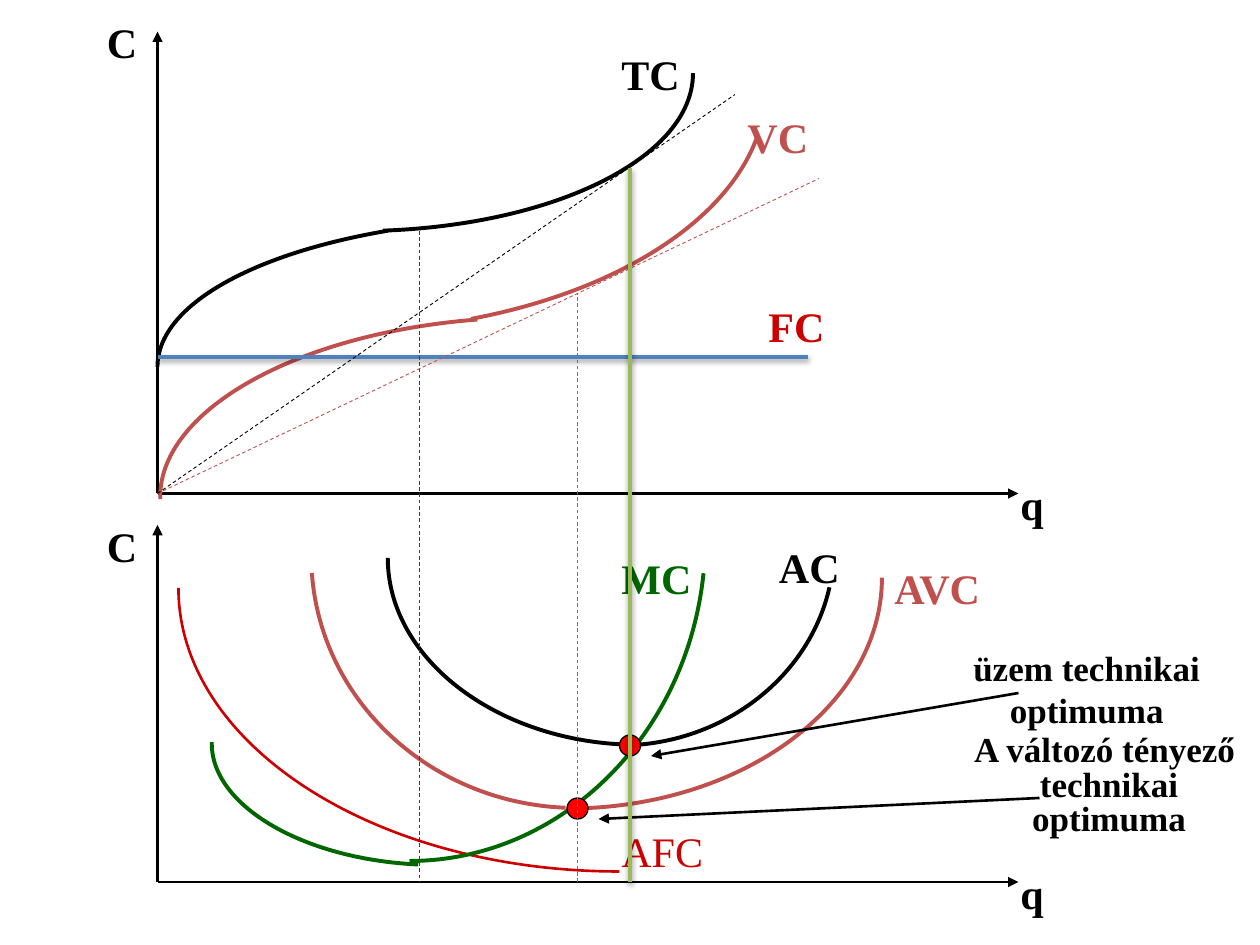
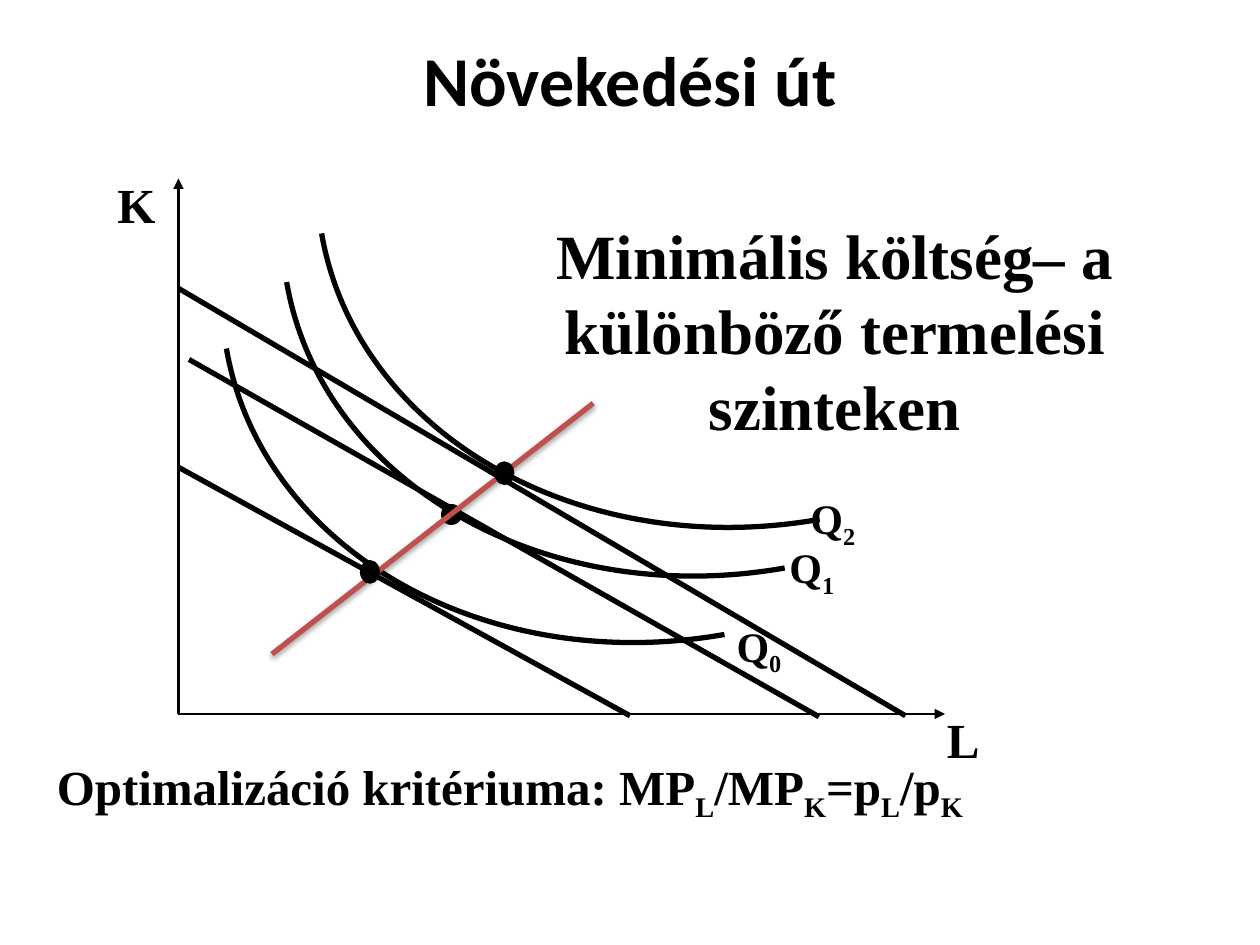
"""Build two slides on cost curves and the expansion path."""

from dataclasses import dataclass

from lxml.etree import SubElement
from pptx import Presentation
from pptx.dml.color import RGBColor
from pptx.enum.dml import MSO_LINE
from pptx.enum.shapes import MSO_CONNECTOR, MSO_SHAPE
from pptx.enum.text import MSO_ANCHOR, MSO_AUTO_SIZE, PP_ALIGN
from pptx.oxml.ns import qn
from pptx.util import Pt


@dataclass(frozen=True)
class Theme:
    black: str = "000000"
    brick: str = "C0504D"
    crimson: str = "CC0000"
    green: str = "006600"
    blue: str = "4F81BD"
    olive: str = "9BBB59"
    red: str = "FF0000"
    body_font: str = "Times New Roman"
    title_font: str = "Calibri"
    title: int = 40
    heading: int = 36
    formula: int = 28
    label: int = 24
    note: int = 20
    axis: float = 1.5
    guide: float = 0.5
    emphasis: float = 2
    curve: float = 2.25
    heavy: float = 3


THEME = Theme()

COST_AXES = [
    ((90, 282), (90, 18)),
    ((90, 282), (582, 282)),
    ((90, 504), (90, 300)),
    ((90, 504), (582, 504)),
]
COST_CURVES = [
    (THEME.brick, THEME.curve, [(272.8, 182.6), (168.2, 190.8), (90.2, 235.4), (91.6, 285.2)]),
    (THEME.brick, THEME.curve, [(269.2, 182.2), (352.8, 166.4), (415.4, 126.6), (432.8, 77.8)]),
    (THEME.black, THEME.curve, [(221.8, 131.8), (141.8, 145.4), (90, 175.6), (90, 209.6)]),
    (THEME.black, THEME.curve, [(218.8, 131.8), (319, 128.2), (396, 89.2), (396, 41.8)]),
    (THEME.crimson, THEME.axis, [(354, 498), (214.6, 498), (102, 425.6), (102, 336)]),
    (THEME.brick, THEME.curve, [(323.2, 461.6), (246.2, 458.6), (183.4, 401), (178.2, 327.4)]),
    (THEME.black, THEME.curve, [(366.4, 425.6), (287.2, 426.2), (221.6, 378), (221.6, 318.8)]),
    (THEME.black, THEME.curve, [(354, 426), (411.8, 426), (462.2, 388), (474, 335.6)]),
    (THEME.brick, THEME.curve, [(324, 462), (423.4, 462), (504, 403.2), (504, 330)]),
    (THEME.green, THEME.curve, [(239, 494), (172.8, 491), (120.2, 460), (121, 424)]),
    (THEME.green, THEME.curve, [(234, 492), (319.6, 492), (392.4, 421.2), (402, 327.6)]),
]
COST_LABELS = [
    ("C", 54, 6, 42, THEME.black),
    ("q", 576, 270, 36, THEME.black),
    ("C", 54, 294, 36, THEME.black),
    ("q", 576, 492, 36, THEME.black),
    ("FC", 432, 168, 60, THEME.crimson),
    ("VC", 420, 60, 54, THEME.brick),
    ("TC", 348, 24, 54, THEME.black),
    ("AVC", 504, 318, 78, THEME.brick),
    ("MC", 348, 312, 60, THEME.green),
    ("AC", 438, 306, 54, THEME.black),
]
FIXED_COST = ((90, 204), (462, 204))
OPTIMUM_LINE = ((360, 96), (360, 504))
OPTIMUM_POINTS = [(360, 426), (330, 462)]
OPTIMUM_ARROWS = [((582, 396), (372, 432)), ((594, 456), (342, 468))]
OPTIMUM_NOTES = [
    (["üzem technikai optimuma"], (546, 366, 150, 55.2), None),
    (["A változó tényező ", "technikai", "optimuma"], (546, 424.8, 175.5, 60.5), 0.4),
]
GUIDES = [
    (THEME.green, (239.8, 132), (239.8, 504)),
    (THEME.brick, (90, 282), (468, 102)),
    (THEME.brick, (330, 504), (330, 168)),
    (THEME.black, (90, 282), (420, 54)),
]

GROWTH_TITLE = "Növekedési út"
GROWTH_AXES = [((102, 408), (540, 408)), ((102, 408), (102, 102))]
ISOCOSTS = [
    ((102, 267), (360, 409)),
    ((108, 205.4), (468, 409.6)),
    ((102, 164.8), (517.4, 409)),
]
ISOQUANT = [(414, 362.6), (276.6, 386.8), (149.2, 313.4), (129.4, 199.2)]
ISOQUANT_SHIFTS = [(0, 0), (34.4, -38), (54.4, -65.8)]
GROWTH_PATH = ((155.4, 373.8), (339, 230.4))
MIDDLE_POINT = (258, 294)
OUTER_POINTS = [(211.4, 326.8), (288.2, 270.4)]
GROWTH_TEXTS = [
    (["K"], (60, 96, 42, 41), THEME.formula, PP_ALIGN.LEFT),
    (["L"], (534, 402, 54, 41), THEME.formula, PP_ALIGN.LEFT),
    (["Q", "2"], (456, 278, 84, 36), THEME.label, PP_ALIGN.LEFT),
    (["Q", "1"], (444, 306, 42, 36), THEME.label, PP_ALIGN.LEFT),
    (["Q", "0"], (413.8, 351, 42.5, 36), THEME.label, PP_ALIGN.LEFT),
    (["Optimalizáció kritériuma: MP", "L", "/MP", "K", "=p", "L", "/p", "K"],
     (25.4, 428.8, 560, 41), THEME.formula, PP_ALIGN.LEFT),
    (["Minimális költség– a különböző termelési szinteken"],
     (270, 120, 414, 138), THEME.heading, PP_ALIGN.CENTER),
]


def style_font(font, size, color=THEME.black, name=THEME.body_font, bold=True):
    """Apply one type style."""
    font.name, font.size, font.bold = name, Pt(size), bold
    font.color.rgb = RGBColor.from_string(color)


def style_line(line, color, width):
    """Apply a solid outline."""
    line.color.rgb = RGBColor.from_string(color)
    line.width = Pt(width)


def add_line(slide, start, end, color=THEME.black, width=THEME.axis,
             arrow=False, dashed=False, shadow=False):
    """Draw a straight line, optionally with an arrowhead, dashes or a shadow."""
    connector = slide.shapes.add_connector(
        MSO_CONNECTOR.STRAIGHT, *(Pt(value) for value in start + end))
    style_line(connector.line, color, width)
    if dashed:
        connector.line.dash_style = MSO_LINE.DASH
    properties = connector._element.spPr
    if arrow:
        SubElement(properties.find(qn("a:ln")), qn("a:tailEnd"), type="triangle")
    effects = SubElement(properties, qn("a:effectLst"))
    if shadow:
        outer = SubElement(effects, qn("a:outerShdw"), blurRad=str(Pt(3.1)),
                           dist=str(Pt(1.6)), dir="5400000", rotWithShape="0")
        tint = SubElement(outer, qn("a:srgbClr"), val=THEME.black)
        SubElement(tint, qn("a:alpha"), val="38000")


def add_curve(slide, controls, color, width):
    """Draw an open cubic curve from its four control points."""
    points = [(Pt(x), Pt(y)) for x, y in controls]
    builder = slide.shapes.build_freeform(*points[0])
    builder.add_line_segments(points[1:], close=False)
    curve = builder.convert_to_shape()
    outline = next(curve._element.spPr.iter(qn("a:path")))
    segments = outline.findall(qn("a:lnTo"))
    cubic = SubElement(outline, qn("a:cubicBezTo"))
    for segment in segments:
        cubic.append(segment[0])
        outline.remove(segment)
    curve.shadow.inherit = False
    curve.fill.background()
    style_line(curve.line, color, width)


def add_dot(slide, center, size, fill, line_width=0, preset=MSO_SHAPE.OVAL):
    """Draw a filled dot around its centre."""
    (x, y), (width, height) = center, size
    dot = slide.shapes.add_shape(
        preset, Pt(x - width / 2), Pt(y - height / 2), Pt(width), Pt(height))
    dot.shadow.inherit = False
    dot.fill.solid()
    dot.fill.fore_color.rgb = RGBColor.from_string(fill)
    if line_width:
        style_line(dot.line, THEME.black, line_width)
    else:
        dot.line.fill.background()


def add_text_frame(slide, box):
    """Add a wrapping text box and return its frame."""
    frame = slide.shapes.add_textbox(*(Pt(value) for value in box)).text_frame
    frame.word_wrap = True
    frame.auto_size = MSO_AUTO_SIZE.SHAPE_TO_FIT_TEXT
    return frame


def add_text(slide, lines, box, size, color=THEME.black, bold=True,
             align=PP_ALIGN.LEFT, spacing=None):
    """Add a text box with one paragraph per line."""
    frame = add_text_frame(slide, box)
    frame.text = "\n".join(lines)
    for index, paragraph in enumerate(frame.paragraphs):
        paragraph.alignment = align
        if spacing:
            paragraph.line_spacing = spacing
        if index:
            paragraph.space_before = Pt(size / 2)
        for run in paragraph.runs:
            style_font(run.font, size, color, bold=bold)


def add_formula(slide, parts, box, size, align):
    """Add one paragraph in which every second part is a subscript."""
    paragraph = add_text_frame(slide, box).paragraphs[0]
    paragraph.alignment = align
    for index, part in enumerate(parts):
        run = paragraph.add_run()
        run.text = part
        style_font(run.font, size)
        if index % 2:
            run._r.get_or_add_rPr().set("baseline", "-25000")


def build_cost_slide(presentation):
    """Build the slide of total and average cost curves."""
    slide = presentation.slides.add_slide(presentation.slide_layouts[6])
    for start, end in COST_AXES:
        add_line(slide, start, end, arrow=True)
    for color, width, controls in COST_CURVES:
        add_curve(slide, controls, color, width)
    add_line(slide, *FIXED_COST, THEME.blue, THEME.emphasis, shadow=True)
    for text, left, top, width, color in COST_LABELS:
        add_text(slide, [text], (left, top, width, 36), THEME.label, color)
    add_text(slide, ["AFC"], (348, 468, 78, 36), THEME.label, THEME.crimson, bold=False)
    for center in OPTIMUM_POINTS:
        add_dot(slide, center, (12, 12), THEME.red, 0.75)
    for start, end in OPTIMUM_ARROWS:
        add_line(slide, start, end, arrow=True)
    for lines, box, spacing in OPTIMUM_NOTES:
        add_text(slide, lines, box, THEME.note, align=PP_ALIGN.CENTER, spacing=spacing)
    for color, start, end in GUIDES:
        add_line(slide, start, end, color, THEME.guide, dashed=True)
    add_line(slide, *OPTIMUM_LINE, THEME.olive, THEME.emphasis, shadow=True)


def build_growth_slide(presentation):
    """Build the slide of isoquants, isocosts and the expansion path."""
    slide = presentation.slides.add_slide(presentation.slide_layouts[5])
    title = slide.shapes.title
    title.left, title.top, title.width, title.height = Pt(24), Pt(0), Pt(672), Pt(90)
    title.text_frame.text = GROWTH_TITLE
    title.text_frame.vertical_anchor = MSO_ANCHOR.MIDDLE
    paragraph = title.text_frame.paragraphs[0]
    paragraph.alignment = PP_ALIGN.CENTER
    style_font(paragraph.runs[0].font, THEME.title, name=THEME.title_font)
    for start, end in GROWTH_AXES:
        add_line(slide, start, end, arrow=True)
    add_dot(slide, MIDDLE_POINT, (12, 12), THEME.black)
    for start, end in ISOCOSTS:
        add_line(slide, start, end, width=THEME.heavy)
    for shift_x, shift_y in ISOQUANT_SHIFTS:
        controls = [(x + shift_x, y + shift_y) for x, y in ISOQUANT]
        add_curve(slide, controls, THEME.black, THEME.heavy)
    for parts, box, size, align in GROWTH_TEXTS:
        add_formula(slide, parts, box, size, align)
    add_line(slide, *GROWTH_PATH, THEME.brick, THEME.heavy, shadow=True)
    for center in OUTER_POINTS:
        add_dot(slide, center, (9.4, 11.5), THEME.black, THEME.emphasis,
                MSO_SHAPE.FLOWCHART_CONNECTOR)


def main():
    """Create and save the presentation."""
    presentation = Presentation()
    presentation.slide_width, presentation.slide_height = Pt(720), Pt(540)
    build_cost_slide(presentation)
    build_growth_slide(presentation)
    presentation.save("out.pptx")


if __name__ == "__main__":
    main()
